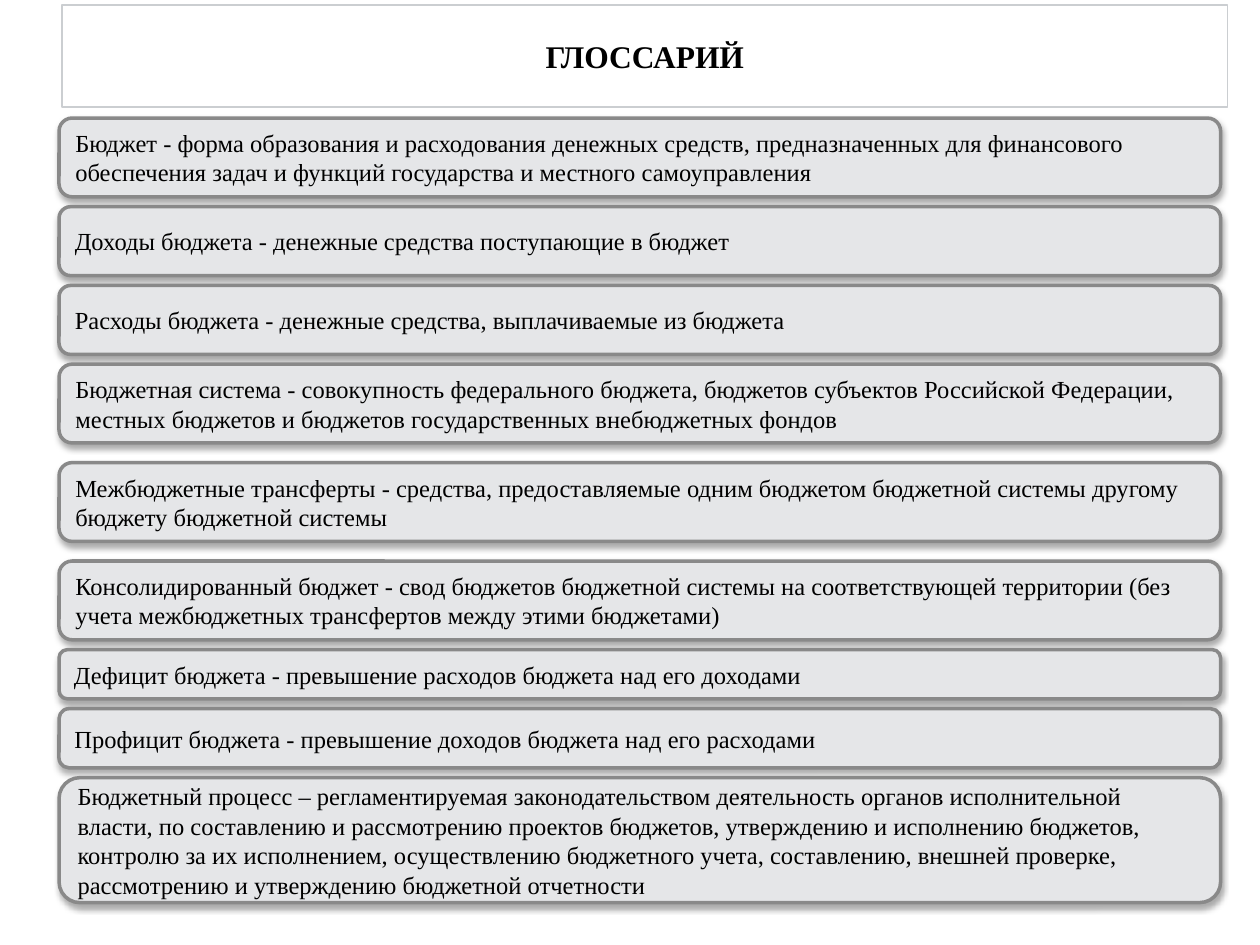
"""Builds a one-slide glossary of budget terms."""
from lxml.etree import SubElement
from pptx import Presentation
from pptx.dml.color import RGBColor
from pptx.enum.shapes import MSO_SHAPE
from pptx.enum.text import MSO_ANCHOR, PP_ALIGN
from pptx.oxml.ns import qn
from pptx.util import Cm, Pt

TITLE = "ГЛОССАРИЙ"
# Each entry: definition, height and gap below in grid steps
DEFINITIONS = [
    ("Бюджет - форма образования и расходования денежных средств, предназначенных для "
     "финансового обеспечения задач и функций государства и местного самоуправления", 8, 1),
    ("Доходы бюджета - денежные средства поступающие в бюджет", 7, 1),
    ("Расходы бюджета - денежные средства, выплачиваемые из бюджета", 7, 1),
    ("Бюджетная система - совокупность федерального бюджета, бюджетов субъектов Российской "
     "Федерации, местных бюджетов и бюджетов государственных внебюджетных фондов", 8, 2),
    ("Межбюджетные трансферты - средства, предоставляемые одним бюджетом бюджетной системы "
     "другому бюджету бюджетной системы", 8, 2),
    ("Консолидированный бюджет - свод бюджетов бюджетной системы на соответствующей территории "
     "(без учета межбюджетных трансфертов между этими бюджетами)", 8, 1),
    ("Дефицит бюджета - превышение расходов бюджета над его доходами", 5, 1),
    ("Профицит бюджета - превышение доходов бюджета над его расходами", 6, 1),
    ("Бюджетный процесс – регламентируемая законодательством деятельность органов "
     "исполнительной власти, по составлению и рассмотрению проектов бюджетов, утверждению и "
     "исполнению бюджетов, контролю за их исполнением, осуществлению бюджетного учета, "
     "составлению, внешней проверке, рассмотрению и утверждению бюджетной отчетности", 12.7, 0),
]
FONT = "Times New Roman"
SLIDE_WIDTH, SLIDE_HEIGHT = 25.4, 19.05
STEP = SLIDE_WIDTH / 128
FIRST_TOP = 12 * STEP
CARD_LEFT, CARD_WIDTH = 6 * STEP, 118 * STEP


def color(value):
    return RGBColor.from_string(value)


def add_box(slide, kind, box, text, size, line, line_width, align, bold=False):
    shape = slide.shapes.add_shape(kind, *map(Cm, box))
    shape.shadow.inherit = False
    shape.fill.background()
    shape.line.color.rgb = color(line)
    shape.line.width = Pt(line_width)
    frame = shape.text_frame
    frame.word_wrap = True
    frame.vertical_anchor = MSO_ANCHOR.MIDDLE
    frame.text = text
    paragraph = frame.paragraphs[0]
    paragraph.alignment = align
    font = paragraph.runs[0].font
    font.name, font.size, font.bold = FONT, Pt(size), bold
    font.color.rgb = color("000000")
    return shape


def add_shadow(shape):
    effects = shape.element.spPr.find(qn("a:effectLst"))
    shadow = SubElement(effects, qn("a:outerShdw"), blurRad=str(Pt(3.5)), dist=str(Pt(2.2)),
                        dir="5400000", rotWithShape="0")
    shade = SubElement(shadow, qn("a:srgbClr"), val="000000")
    SubElement(shade, qn("a:alpha"), val="32000")


def main():
    presentation = Presentation()
    presentation.slide_width, presentation.slide_height = Cm(SLIDE_WIDTH), Cm(SLIDE_HEIGHT)
    slide = presentation.slides.add_slide(presentation.slide_layouts[6])
    add_box(slide, MSO_SHAPE.RECTANGLE, (1.25, 0.1, 23.5, 2.06), TITLE, 18,
            "CBCED1", 0.75, PP_ALIGN.CENTER, bold=True)
    top = FIRST_TOP
    for text, height, gap in DEFINITIONS:
        card = add_box(slide, MSO_SHAPE.ROUNDED_RECTANGLE,
                       (CARD_LEFT, top, CARD_WIDTH, height * STEP), text, 14,
                       "898989", 2, PP_ALIGN.LEFT)
        card.fill.solid()
        card.fill.fore_color.rgb = color("E5E6E8")
        add_shadow(card)
        top += (height + gap) * STEP
    presentation.save("out.pptx")


if __name__ == "__main__":
    main()
